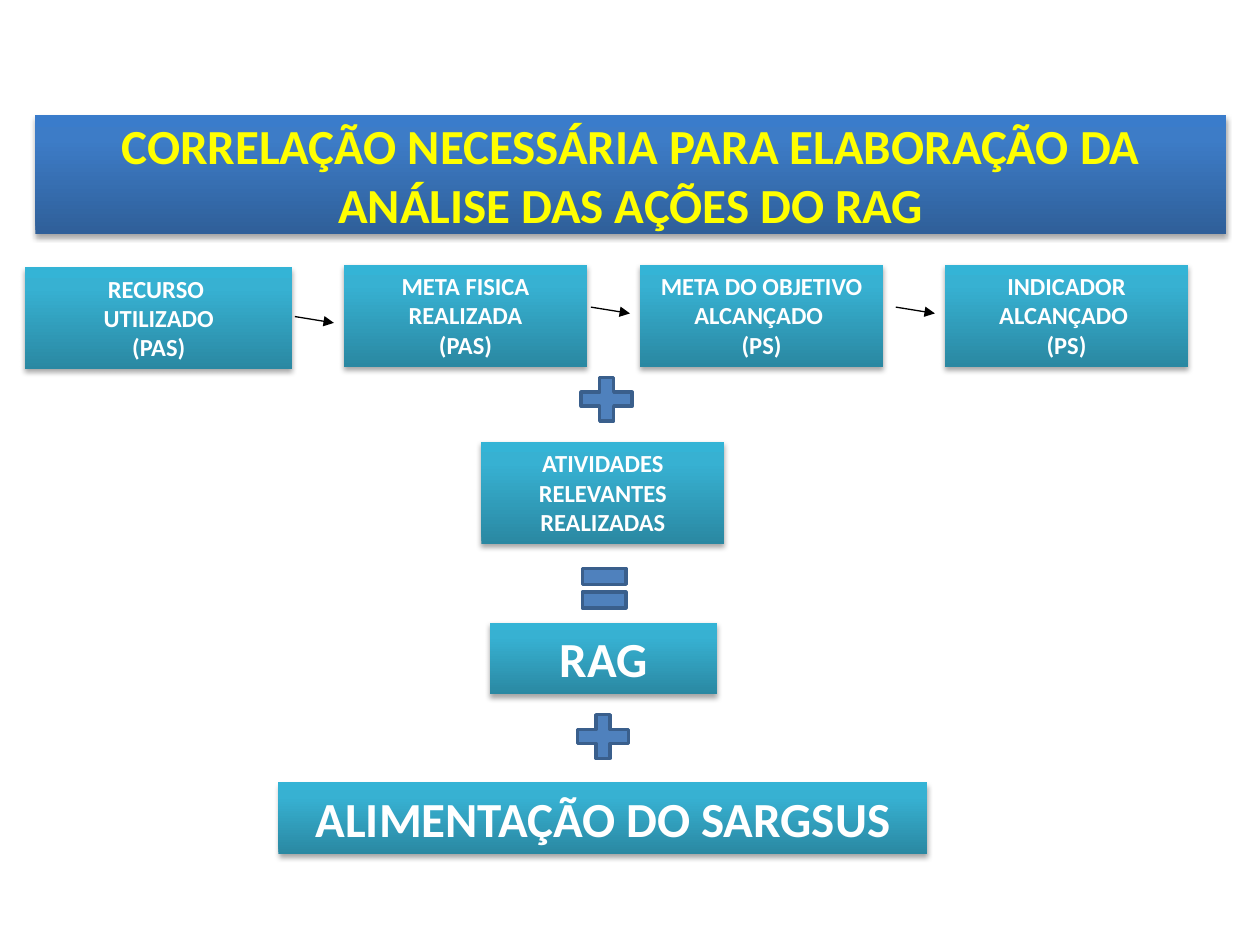
"""Build the slide on how the results feed the RAG analysis."""
from copy import deepcopy
from lxml.etree import SubElement
from pptx import Presentation
from pptx.dml.color import RGBColor
from pptx.enum.shapes import MSO_CONNECTOR, MSO_SHAPE
from pptx.enum.text import MSO_ANCHOR, MSO_AUTO_SIZE, PP_ALIGN
from pptx.oxml.ns import qn
from pptx.util import Inches, Pt

rgb = RGBColor.from_string
deck = Presentation()
deck.slide_width, deck.slide_height = Inches(10), Inches(7.5)
col, row = deck.slide_width / 100, deck.slide_height / 100
slide = deck.slides.add_slide(deck.slide_layouts[5])
shapes = slide.shapes


def span(x, y, wide, high):
    """Turn shares of the slide, in percent, into lengths."""
    return int(x * col), int(y * row), int(wide * col), int(high * row)


def dress(box, text, size, ink, shades):
    """Give a box its gradient, shadow and text."""
    box.fill.gradient()
    box.fill.gradient_angle = 90
    stops = box._element.spPr.find(qn("a:gradFill")).find(qn("a:gsLst"))
    stops.append(deepcopy(stops[-1]))
    for stop, spot, shade in zip(box.fill.gradient_stops, (0, 0.8, 1), shades):
        stop.position = spot
        stop.color.rgb = rgb(shade)
    box.line.fill.background()
    box.shadow.inherit = False
    glow = SubElement(box._element.spPr.find(qn("a:effectLst")), qn("a:outerShdw"),
                      blurRad=str(Pt(3.1)), dist=str(Pt(1.8)), dir="5400000", rotWithShape="0")
    tint = SubElement(glow, qn("a:srgbClr"), val="000000")
    SubElement(tint, qn("a:alpha"), val="35000")
    frame = box.text_frame
    frame.text = text
    frame.word_wrap = True
    for line in frame.paragraphs:
        line.alignment = PP_ALIGN.CENTER
        for run in line.runs:
            run.font.name, run.font.size, run.font.bold = "Calibri", Pt(size), True
            run.font.color.rgb = rgb(ink)


title = shapes.title
title.left, title.top, title.width, title.height = span(2.8, 12.2, 94.5, 12.6)
dress(title, "CORRELAÇÃO NECESSÁRIA PARA ELABORAÇÃO DA ANÁLISE DAS AÇÕES DO RAG",
      28, "FFFF00", ("2F5F99", "3D7CC7", "3A7CCB"))
title.text_frame.vertical_anchor = MSO_ANCHOR.MIDDLE
title.text_frame.auto_size = MSO_AUTO_SIZE.NONE

steps = (
    ("RECURSO \nUTILIZADO\n(PAS)", 14, 2, 28.3, 21.2, 10.8),
    ("META FISICA REALIZADA\n(PAS)", 14, 27.3, 28, 19.3, 10.8),
    ("META DO OBJETIVO ALCANÇADO \n(PS)", 14, 50.8, 28, 19.3, 10.8),
    ("INDICADOR ALCANÇADO \n(PS)", 14, 75, 28, 19.3, 10.8),
    ("ATIVIDADES RELEVANTES REALIZADAS", 14, 38.2, 46.8, 19.3, 10.8),
    ("RAG", 28, 38.9, 65.9, 18, 7.6),
    ("ALIMENTAÇÃO DO SARGSUS", 28, 22.1, 82.8, 51.5, 7.6),
)
for text, size, *place in steps:
    box = shapes.add_shape(MSO_SHAPE.RECTANGLE, *span(*place))
    dress(box, text, size, "FFFFFF", ("2A88A2", "37B1D2", "34B4D6"))
    box.text_frame.vertical_anchor = MSO_ANCHOR.TOP
    box.text_frame.auto_size = MSO_AUTO_SIZE.SHAPE_TO_FIT_TEXT

for x, y in ((23.4, 33.5), (46.9, 32.5), (71.1, 32.5)):
    left, top, wide, high = span(x, y, 3.1, 0.67)
    arrow = shapes.add_connector(MSO_CONNECTOR.STRAIGHT, left, top, left + wide, top + high)
    arrow.line.color.rgb = rgb("000000")
    arrow.line.width = Pt(0.75)
    SubElement(arrow.line._get_or_add_ln(), qn("a:tailEnd"), type="triangle")
    SubElement(arrow._element.spPr, qn("a:effectLst"))

signs = (
    (MSO_SHAPE.MATH_PLUS, 45.4, 39.1, 5.5, 6.3),
    (MSO_SHAPE.MATH_EQUAL, 45.6, 58.7, 4.7, 7.1),
    (MSO_SHAPE.MATH_PLUS, 45.1, 74.8, 5.5, 6.3),
)
for kind, *place in signs:
    sign = shapes.add_shape(kind, *span(*place))
    sign.shadow.inherit = False
    sign.fill.solid()
    sign.fill.fore_color.rgb = rgb("4F81BD")
    sign.line.color.rgb = rgb("3A5F8C")
    sign.line.width = Pt(2)

deck.save("out.pptx")
